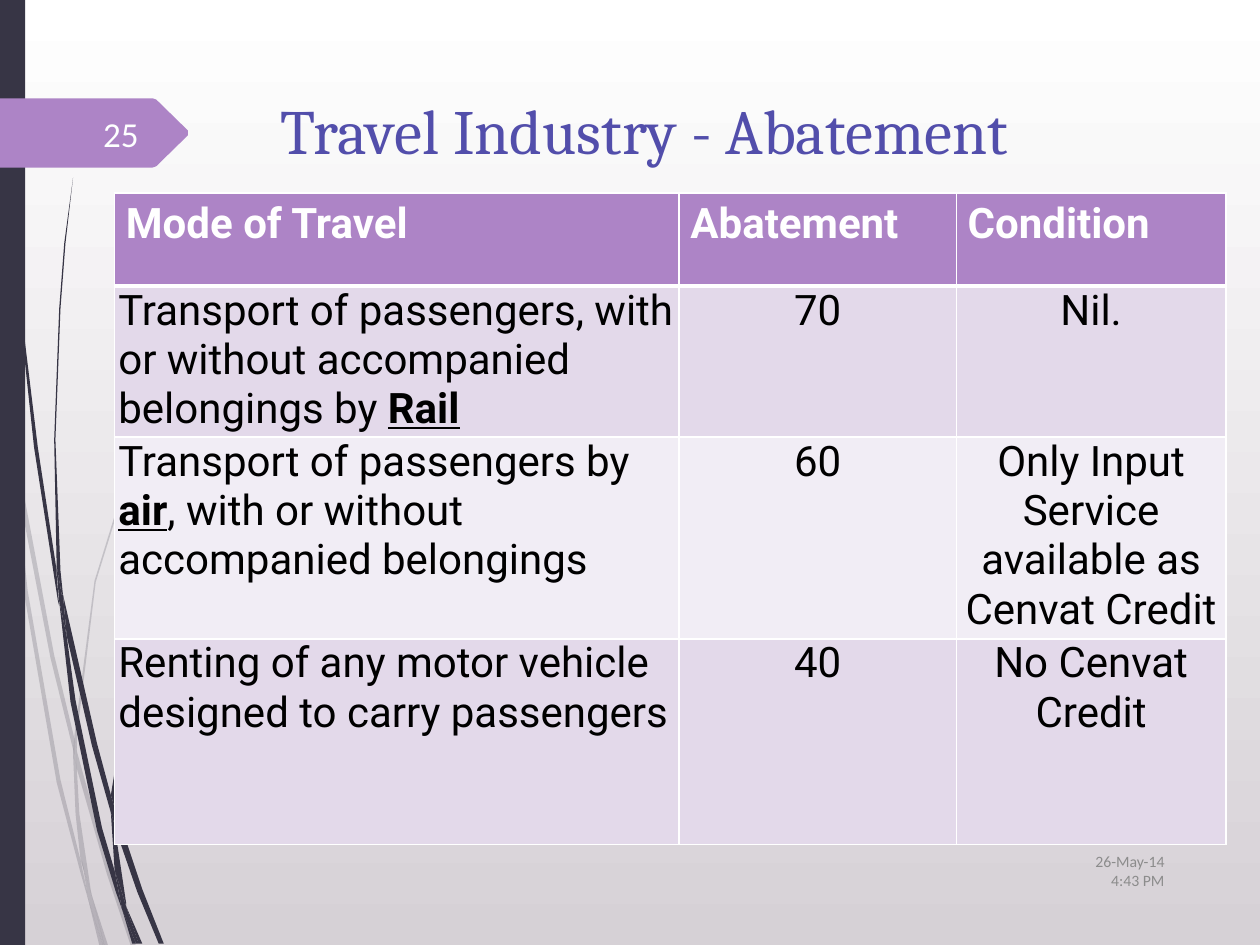
from lxml.etree import SubElement
from pptx import Presentation
from pptx.dml.color import RGBColor
from pptx.enum.shapes import MSO_SHAPE
from pptx.enum.text import MSO_ANCHOR, PP_ALIGN
from pptx.oxml.ns import qn
from pptx.util import Inches, Pt

COLORS = {
    "white": "FFFFFF", "mist": "D6D1D6", "dark": "373545", "purple": "AD84C6",
    "band": "E3D9EA", "pale": "F1EDF5", "title": "524EAB", "black": "000000",
    "grey": "8C8C8C", "number": "FEFFFF",
}

FAINT_WISPS = [
    [(0.08, 3.5), (0.06, 3.22), (0, 2.82), (0, 2.99), (0.07, 3.44)],
    [(0.4, 5.22), (0.59, 5.99), (0.59, 5.86), (0.43, 5.2), (0.1, 3.45), (0.12, 3.76)],
    [(0.64, 6.07), (0.61, 5.96), (0.61, 6.1), (0.85, 6.94), (1.04, 7.51), (1.08, 7.51),
     (0.88, 6.92)],
    [(0.83, 7.51), (0.86, 7.51), (0.73, 7.11)],
    [(0.64, 6.83), (0.48, 6.19), (0.22, 4.69), (0.12, 3.76), (0.08, 3.5), (0.19, 4.7),
     (0.45, 6.21), (0.64, 6.93), (0.7, 7.14), (0.69, 7.07)],
    [(0.58, 5.99), (0.6, 6.46), (0.64, 6.83), (0.67, 6.92), (0.73, 7.11), (0.72, 7.06),
     (0.63, 6.46), (0.61, 6.1), (0.61, 6.08)],
    [(0.61, 5.84), (0.76, 4.62), (1.11, 3.49), (1.59, 2.45), (1.87, 1.98), (2.01, 1.75),
     (2.17, 1.54), (2.17, 1.53), (2.01, 1.75), (1.86, 1.97), (1.58, 2.44), (1.1, 3.48),
     (0.75, 4.61), (0.59, 5.84), (0.59, 5.86), (0.61, 5.96)],
    [(0.7, 7.14), (0.79, 7.51), (0.82, 7.51)],
    [(0.61, 6.08), (0.61, 6.1), (0.61, 5.96), (0.59, 5.86), (0.58, 5.99)],
    [(0.67, 6.92), (0.65, 6.83), (0.69, 7.07), (0.7, 7.14), (0.82, 7.51), (0.83, 7.51),
     (0.73, 7.11)],
]
DARK_WISPS = [
    [(0.05, 1.1), (0.14, 2.33), (0.27, 3.55), (0.46, 4.77), (0.47, 4.81), (0.45, 4.57),
     (0.45, 4.53), (0.3, 3.55), (0.15, 2.32), (0.06, 1.09), (0.04, 0.48), (0.03, 0),
     (0.02, 0), (0.03, 0.48)],
    [(0.73, 5.92), (0.88, 6.45), (0.88, 6.33), (0.88, 6.31), (0.77, 5.9), (0.5, 4.72),
     (0.53, 5.05)],
    [(0.94, 6.49), (0.91, 6.41), (0.91, 6.56), (1.09, 7.08), (1.26, 7.49), (1.3, 7.49),
     (1.13, 7.06)],
    [(0.91, 6.91), (0.81, 6.57), (0.6, 5.56), (0.53, 5.05), (0.47, 4.77), (0.56, 5.57),
     (0.77, 6.59), (0.92, 7.08), (0.97, 7.22), (0.96, 7.17)],
    [(0.5, 4.72), (0.48, 4.53), (0.44, 3.49), (0.48, 2.45), (0.52, 1.93), (0.58, 1.41),
     (0.51, 1.93), (0.47, 2.45), (0.43, 3.49), (0.45, 4.49), (0.49, 4.72)],
    [(1.1, 7.49), (1.13, 7.49), (1, 7.19)],
    [(0.47, 4.77), (0.53, 5.05), (0.5, 4.72), (0.49, 4.72), (0.45, 4.49), (0.45, 4.53)],
    [(0.91, 6.33), (1.03, 5.52), (1.31, 4.76), (1.69, 4.06), (1.91, 3.74), (2.03, 3.59),
     (2.16, 3.44), (2.15, 3.44), (2.03, 3.58), (1.91, 3.73), (1.68, 4.05), (1.29, 4.74),
     (1.01, 5.51), (0.88, 6.31), (0.91, 6.41)],
    [(0.97, 7.22), (1.05, 7.49), (1.08, 7.49)],
    [(0.88, 6.45), (0.91, 6.91), (0.96, 7.06), (1, 7.19), (1, 7.16), (0.91, 6.56),
     (0.9, 6.51)],
    [(0.88, 6.45), (0.9, 6.51), (0.91, 6.56), (0.91, 6.41), (0.88, 6.31), (0.88, 6.33)],
    [(0.96, 7.06), (0.91, 6.91), (0.96, 7.17), (0.97, 7.22), (1.08, 7.49), (1.1, 7.49),
     (1, 7.19)],
]

HEADERS = ["Mode of Travel", "Abatement", "Condition"]
ROWS = [
    (["Transport of passengers, with or without accompanied belongings by ", ("Rail",)],
     "70", "Nil."),
    (["Transport of passengers by", (" air",), ", with or without accompanied belongings"],
     "60", "Only Input Service available as Cenvat Credit"),
    ("Renting of any motor vehicle designed to carry passengers", "40", "No Cenvat Credit"),
]


def rgb(name):
    return RGBColor.from_string(COLORS[name])


def write(tf, text, size=24, font="Roboto", color="black", bold=False,
          align=PP_ALIGN.LEFT, anchor=MSO_ANCHOR.TOP):
    tf.word_wrap = True
    tf.vertical_anchor = anchor
    p = tf.paragraphs[0]
    p.alignment = align
    for part in [text] if isinstance(text, str) else text:
        marked = isinstance(part, tuple)
        r = p.add_run()
        r.text = part[0] if marked else part
        r.font.size = Pt(size)
        r.font.name = font
        r.font.bold = bold or marked
        r.font.underline = marked
        r.font.color.rgb = rgb(color)


def add_text(s, box, text, **style):
    sp = s.shapes.add_textbox(*map(Inches, box))
    write(sp.text_frame, text, **style)


def paint(sp, color, alpha=None):
    sp.shadow.inherit = False
    sp.fill.solid()
    sp.fill.fore_color.rgb = rgb(color)
    sp.line.fill.background()
    if alpha:
        clr = sp.fill._xPr.find(qn("a:solidFill"))[0]
        SubElement(clr, qn("a:alpha"), val=str(alpha * 1000))


def add_outline(s, points, color, alpha=None):
    points = [(Inches(x), Inches(y)) for x, y in points]
    fb = s.shapes.build_freeform(*points[0])
    fb.add_line_segments(points[1:], close=True)
    paint(fb.convert_to_shape(), color, alpha)


def add_backdrop(s, height):
    fill = s.background.fill
    fill.gradient()
    fill.gradient_angle = 270
    for stop, color in zip(fill.gradient_stops, ("white", "mist")):
        stop.color.rgb = rgb(color)
    for wisp in FAINT_WISPS:
        add_outline(s, wisp, "dark", 20)
    for wisp in DARK_WISPS:
        add_outline(s, wisp, "dark")
    bar = s.shapes.add_shape(MSO_SHAPE.RECTANGLE, 0, 0, Inches(0.2), height)
    paint(bar, "dark")


def add_page_tag(s, x, y, w, h):
    mid = y + h / 2
    add_outline(s, [(x, y), (x + w - 0.28, y), (x + w - 0.25, y + 0.01),
                    (x + w, mid - 0.02), (x + w, mid + 0.02),
                    (x + w - 0.25, y + h - 0.01), (x + w - 0.28, y + h), (x, y + h)],
                "purple")
    add_text(s, (x + 0.56, y + 0.08, 0.64, 0.4), "25", size=20, font="Calibri",
             color="number", align=PP_ALIGN.RIGHT, anchor=MSO_ANCHOR.MIDDLE)


def style_cell(cell, fill, inset_x, inset_y, top, bottom):
    cell.margin_left = cell.margin_right = Inches(inset_x)
    cell.margin_top = cell.margin_bottom = Inches(inset_y)
    tcPr = cell._tc.get_or_add_tcPr()
    for side, width in (("lnL", 1), ("lnR", 1), ("lnT", top), ("lnB", bottom)):
        ln = SubElement(tcPr, qn(f"a:{side}"), w=str(Pt(width)))
        SubElement(SubElement(ln, qn("a:solidFill")), qn("a:srgbClr"), val=COLORS["white"])
    cell.fill.solid()
    cell.fill.fore_color.rgb = rgb(fill)


def add_abatement_table(s, x, y, w, h):
    frame = s.shapes.add_table(len(ROWS) + 1, len(HEADERS), *map(Inches, (x, y, w, h)))
    table = frame.table
    for col, width in zip(table.columns, (4.48, 2.2, 2.14)):
        col.width = Inches(width)
    for row, height in zip(table.rows, (0.74, 1.14, 1.53, 1.63)):
        row.height = Inches(height)
    for c, text in enumerate(HEADERS):
        cell = table.cell(0, c)
        style_cell(cell, "purple", 0.09, 0.05, 1, 3)
        write(cell.text_frame, text, color="white", bold=True)
    for r, texts in enumerate(ROWS, 1):
        for c, text in enumerate(texts):
            cell = table.cell(r, c)
            style_cell(cell, "band" if r % 2 else "pale", 0.03, 0, 3 if r == 1 else 1, 1)
            write(cell.text_frame, text, align=PP_ALIGN.CENTER if c else PP_ALIGN.LEFT)


def main():
    prs = Presentation()
    prs.slide_width, prs.slide_height = Inches(10), Inches(7.5)
    s = prs.slides.add_slide(prs.slide_layouts[6])
    add_backdrop(s, prs.slide_height)
    add_page_tag(s, 0, 0.78, 1.49, 0.55)
    add_text(s, (2.13, 0.68, 7.21, 1.4), "Travel Industry - Abatement",
             size=36, font="Cambria", color="title")
    add_abatement_table(s, 0.91, 1.53, 8.82, 5.04)
    add_text(s, (8.5, 6.71, 0.84, 0.4), "26-May-14 4:43 PM", size=9, font="Calibri",
             color="grey", align=PP_ALIGN.RIGHT, anchor=MSO_ANCHOR.MIDDLE)
    prs.save("out.pptx")


if __name__ == "__main__":
    main()
